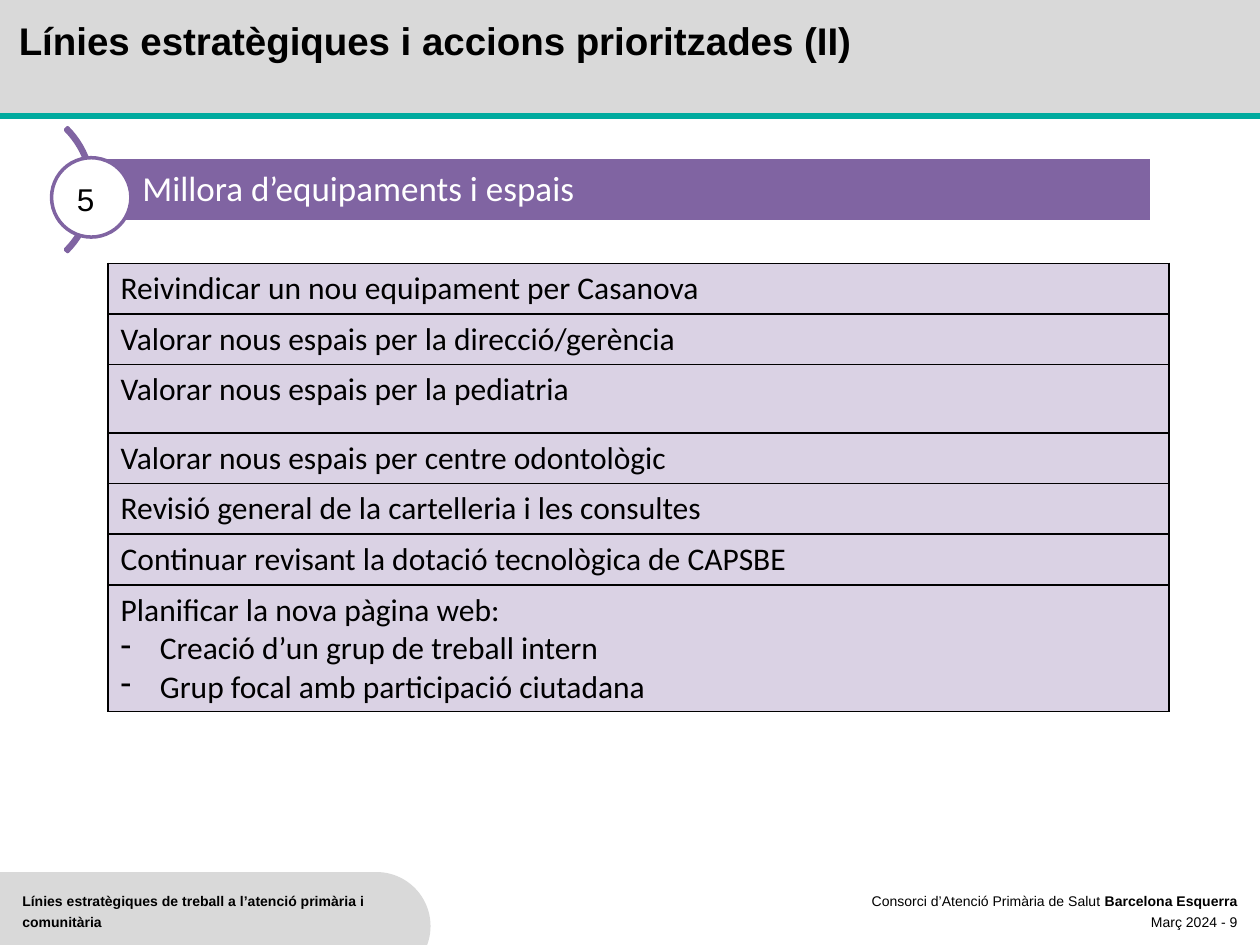
from lxml.etree import SubElement as Sub
from pptx import Presentation
from pptx.dml.color import RGBColor
from pptx.enum.shapes import MSO_CONNECTOR as Link, MSO_SHAPE as Kind
from pptx.enum.text import MSO_ANCHOR as Anchor, PP_ALIGN as Align
from pptx.oxml.ns import qn
from pptx.util import Cm, Pt

BLACK = RGBColor(0, 0, 0)
WHITE = RGBColor(255, 255, 255)
GREY = RGBColor(0xD9, 0xD9, 0xD9)
TEAL = RGBColor(0x00, 0xAA, 0x9E)
PURPLE = RGBColor(0x80, 0x64, 0xA2)
LILAC = RGBColor(0xDA, 0xD2, 0xE4)

TITLE = "Línies estratègiques i accions prioritzades (II)"
NUMBER, HEADING = "5", "Millora d’equipaments i espais"
ACTIONS = [
    ("Reivindicar un nou equipament per Casanova", 1.02, []),
    ("Valorar nous espais per la direcció/gerència", 1.02, []),
    ("Valorar nous espais per la pediatria", 1.38, []),
    ("Valorar nous espais per centre odontològic", 1.02, []),
    ("Revisió general de la cartelleria i les consultes", 1.02, []),
    ("Continuar revisant la dotació tecnològica de CAPSBE", 1.02, []),
    ("Planificar la nova pàgina web:", 2.55,
     ["Creació d’un grup de treball intern",
      "Grup focal amb participació ciutadana"]),
]
TOPIC = "Línies estratègiques de treball a l’atenció primària i comunitària"
OWNER = ("Consorci d’Atenció Primària de Salut ", "Barcelona Esquerra")
DATE = "Març 2024 - 9"

deck = Presentation()
deck.slide_width, deck.slide_height = Cm(25.4), Cm(19.05)
slide = deck.slides.add_slide(deck.slide_layouts[6])
shapes = slide.shapes


def style(para, size, name="Arial", color=BLACK, bold=None):
    font = para.font
    font.size, font.name, font.bold = Pt(size), name, bold
    font.color.rgb = color


def draw(kind, box, fill=None, line=None):
    shape = shapes.add_shape(kind, *map(Cm, box))
    shape.shadow.inherit = False
    if fill is None:
        shape.fill.background()
    else:
        shape.fill.solid()
        shape.fill.fore_color.rgb = fill
    if line is None:
        shape.line.fill.background()
    else:
        shape.line.color.rgb = line
        shape.line.width = Pt(2)
    return shape


def write(box, text, size, pitch=None, **look):
    frame = shapes.add_textbox(*map(Cm, box)).text_frame
    frame.word_wrap = True
    para = frame.paragraphs[0]
    para.text = text
    para.line_spacing = pitch
    style(para, size, **look)
    return frame


def border(cell):
    props = cell._tc.get_or_add_tcPr()
    for side in ("lnL", "lnR", "lnT", "lnB"):
        line = Sub(props, qn("a:" + side), w=str(Pt(1)))
        fill = Sub(line, qn("a:solidFill"))
        Sub(fill, qn("a:srgbClr"), val=str(BLACK))


def dash(para):
    props = para._p.get_or_add_pPr()
    props.set("marL", str(Cm(0.79)))
    props.set("indent", str(-Cm(0.79)))
    Sub(props, qn("a:buChar"), char="-")


draw(Kind.RECTANGLE, (0, 17.58, 7.67, 1.83), GREY)
draw(Kind.OVAL, (6.5, 17.58, 2.18, 2.18), GREY)
draw(Kind.RECTANGLE, (0, 0, 25.4, 2.34), GREY)
rule = shapes.add_connector(Link.STRAIGHT, 0, Cm(2.34), Cm(25.4), Cm(2.34))
rule.line.color.rgb, rule.line.width = TEAL, Pt(3)
Sub(rule._element.spPr, qn("a:effectLst"))

write((0.2, 17.78, 7.67, 1.19), TOPIC, 8, Pt(12), bold=True)
foot = write((17.15, 17.78, 8.05, 1.27), OWNER[0], 8, Pt(12))
run = foot.paragraphs[0].add_run()
run.text, run.font.bold = OWNER[1], True
last = foot.add_paragraph()
last.text, last.line_spacing = DATE, Pt(12)
style(last, 8)
for para in foot.paragraphs:
    para.alignment = Align.RIGHT

write((0.13, 0.38, 21.67, 1.04), TITLE, 22, Pt(22), bold=True)

grid = shapes.add_table(len(ACTIONS), 1, Cm(2.18), Cm(5.31), Cm(21.39),
                        Cm(sum(tall for _, tall, _ in ACTIONS))).table
for row, (text, tall, parts) in zip(grid.rows, ACTIONS):
    row.height = Cm(tall)
    cell = row.cells[0]
    border(cell)
    cell.fill.solid()
    cell.fill.fore_color.rgb = LILAC
    cell.text = "\n".join([text] + parts)
    for rank, para in enumerate(cell.text_frame.paragraphs):
        if rank:
            dash(para)
        style(para, 18, "Calibri", BLACK, False)

arc = draw(Kind.BLOCK_ARC, (-1.65, 2.06, 3.53, 3.53), line=PURPLE)
for rank, value in enumerate((189, 27, 0.017)):
    arc.adjustments[rank] = value

band = draw(Kind.RECTANGLE, (1.83, 3.18, 21.39, 1.3), PURPLE, WHITE)
frame = band.text_frame
frame.margin_left = Cm(1.04)
frame.margin_top = frame.margin_right = frame.margin_bottom = Cm(0.15)
frame.vertical_anchor = Anchor.MIDDLE
para = frame.paragraphs[0]
para.text, para.alignment, para.line_spacing = HEADING, Align.LEFT, 0.9
style(para, 20, "Calibri", WHITE)

draw(Kind.OVAL, (1.04, 3.18, 1.6, 1.6), WHITE, PURPLE)
write((1.3, 3.5, 1.04, 1.02), NUMBER, 18)

deck.save("out.pptx")
